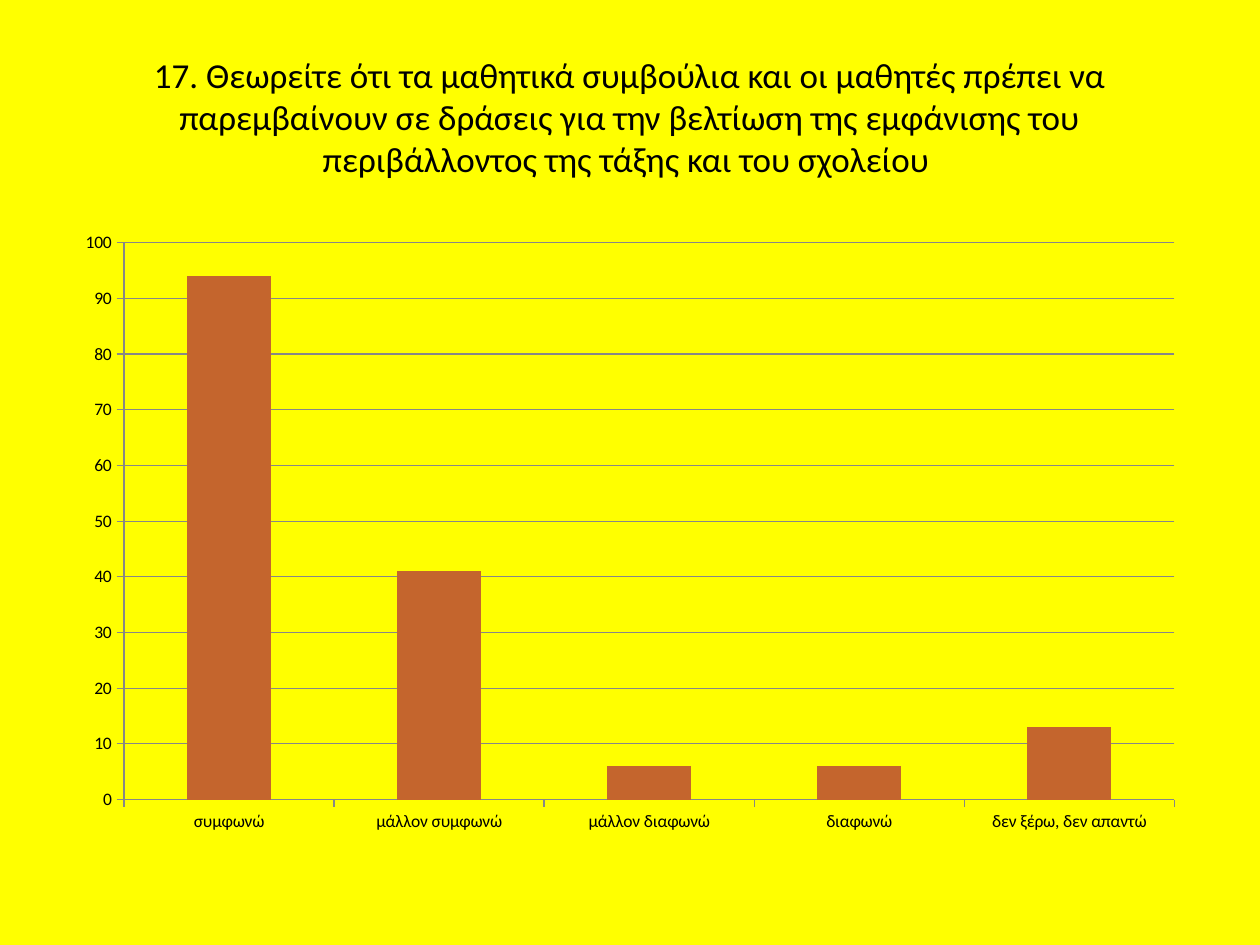
from dataclasses import dataclass
from pptx import Presentation
from pptx.chart.data import CategoryChartData as Data
from pptx.dml.color import RGBColor as Rgb
from pptx.enum.chart import XL_CHART_TYPE as Kind, XL_TICK_MARK as Tick
from pptx.enum.text import MSO_ANCHOR as Anchor, PP_ALIGN as Align
from pptx.util import Inches, Pt

TITLE = (
    "17. Θεωρείτε ότι τα μαθητικά συμβούλια και οι μαθητές πρέπει να "
    "παρεμβαίνουν σε δράσεις για την βελτίωση της εμφάνισης του "
    "περιβάλλοντος της τάξης και του σχολείου "
)
ANSWERS = [
    ("συμφωνώ", 94),
    ("μάλλον συμφωνώ", 41),
    ("μάλλον διαφωνώ", 6),
    ("διαφωνώ", 6),
    ("δεν ξέρω, δεν απαντώ", 13),
]


@dataclass(frozen=True)
class Theme:
    face: str = "Calibri"
    back: str = "FFFF00"
    ink: str = "000000"
    bar: str = "C4652D"
    line: str = "878787"
    head: int = 20
    label: int = 10


THEME = Theme()
WIDE, HIGH = Inches(10), Inches(7.5)
HEAD = (0.05, 0.04, 0.9, 1 / 6)
PLOT = (0.05, 7 / 30, 0.9, 0.66)


def place(share):
    return [round(part * side) for part, side in zip(share, (WIDE, HIGH) * 2)]


def style(font, size, color=THEME.ink):
    font.name = THEME.face
    font.size = Pt(size)
    font.bold = False
    font.color.rgb = Rgb.from_string(color)


def write(shape, text, size, align=Align.CENTER, anchor=Anchor.MIDDLE):
    frame = shape.text_frame
    frame.word_wrap = True
    frame.vertical_anchor = anchor
    frame.text = text
    para = frame.paragraphs[0]
    para.alignment = align
    style(para.runs[0].font, size)


def stroke(line):
    line.color.rgb = Rgb.from_string(THEME.line)
    line.width = Pt(0.75)


def draw(slide):
    data = Data()
    data.categories = [name for name, _ in ANSWERS]
    data.add_series("Series 1", [count for _, count in ANSWERS])
    chart = slide.shapes.add_chart(Kind.COLUMN_CLUSTERED, *place(PLOT), data).chart
    chart.has_legend = False
    chart.has_title = False
    style(chart.font, THEME.label)

    plot = chart.plots[0]
    plot.gap_width = 150
    plot.vary_by_categories = False
    fill = plot.series[0].format.fill
    fill.solid()
    fill.fore_color.rgb = Rgb.from_string(THEME.bar)

    for axis in (chart.category_axis, chart.value_axis):
        axis.major_tick_mark = Tick.OUTSIDE
        axis.minor_tick_mark = Tick.NONE
        stroke(axis.format.line)
    scale = chart.value_axis
    scale.minimum_scale, scale.maximum_scale, scale.major_unit = 0, 100, 10
    scale.has_major_gridlines = True
    stroke(scale.major_gridlines.format.line)


def main():
    deck = Presentation()
    deck.slide_width, deck.slide_height = WIDE, HIGH
    slide = deck.slides.add_slide(deck.slide_layouts[5])
    back = slide.background.fill
    back.solid()
    back.fore_color.rgb = Rgb.from_string(THEME.back)

    title = slide.shapes.title
    title.left, title.top, title.width, title.height = place(HEAD)
    write(title, TITLE, THEME.head)
    draw(slide)
    deck.save("out.pptx")


if __name__ == "__main__":
    main()
